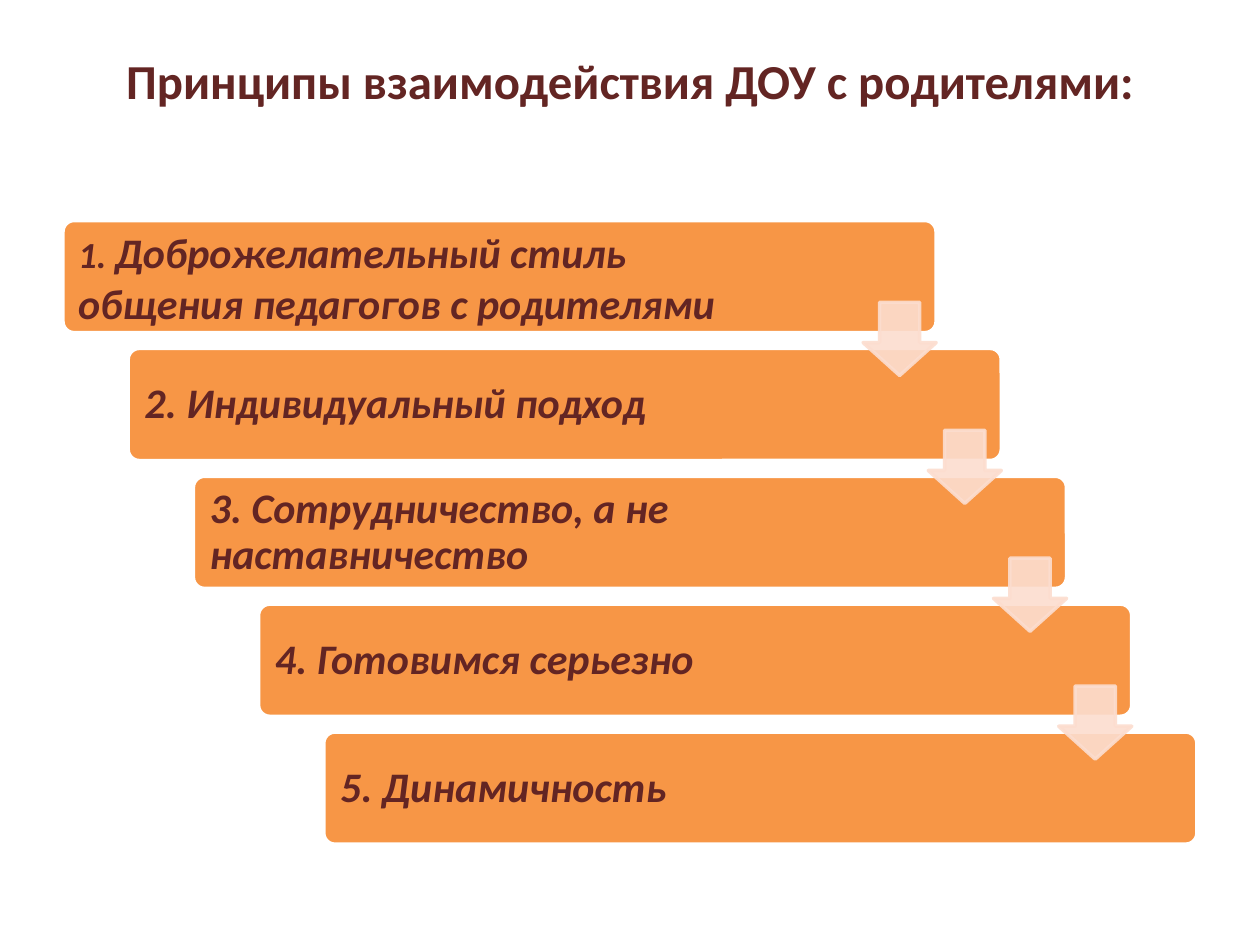
from lxml import etree
from pptx import Presentation
from pptx.dml.color import RGBColor
from pptx.enum.shapes import MSO_SHAPE
from pptx.enum.text import MSO_ANCHOR, PP_ALIGN
from pptx.oxml.ns import qn
from pptx.util import Inches, Pt

COLORS = {"text": "632523", "step": "F79646", "edge": "FFFFFF", "arrow": "FCDDCF"}
PRINCIPLES = [
    "Доброжелательный стиль общения педагогов с родителями",
    "Индивидуальный подход",
    "Сотрудничество, а не наставничество",
    "Готовимся серьезно",
    "Динамичность",
]
FIRST_LEFT, LAST_LEFT = 0.5, 2.57
FIRST_TOP, LAST_TOP = 1.75, 5.81
STEP_WIDTH, STEP_HEIGHT = 6.93, 0.89
ARROW_SIZE = 0.58


class SlideBuilder:
    font_name = "Calibri"

    def __init__(self, page):
        self.page = page

    def shape(self, preset, left, top, width, height, adjustments, fill, line, opacity=100):
        shape = self.page.shapes.add_shape(
            preset, Inches(left), Inches(top), Inches(width), Inches(height))
        shape.shadow.inherit = False
        for index, value in enumerate(adjustments):
            shape.adjustments[index] = value
        shape.fill.solid()
        shape.fill.fore_color.rgb = RGBColor.from_string(COLORS[fill])
        shape.line.color.rgb = RGBColor.from_string(COLORS[line])
        shape.line.width = Pt(2)
        if opacity < 100:
            for color in shape._element.spPr.iter(qn("a:srgbClr")):
                etree.SubElement(color, qn("a:alpha"), val=str(opacity * 1000))

    def text(self, left, top, width, height, spans, size, inset=0.1, italic=False,
             align=PP_ALIGN.LEFT, anchor=MSO_ANCHOR.MIDDLE, spacing=1.0):
        """Add one bold paragraph; spans are (text, own size or None)."""
        box = self.page.shapes.add_textbox(
            Inches(left), Inches(top), Inches(width), Inches(height))
        frame = box.text_frame
        frame.word_wrap = True
        frame.vertical_anchor = anchor
        frame.margin_left = frame.margin_right = Inches(inset)
        frame.margin_top = frame.margin_bottom = Inches(inset)
        para = frame.paragraphs[0]
        para.alignment = align
        para.line_spacing = spacing
        font = para.font
        font.name, font.size, font.bold, font.italic = self.font_name, Pt(size), True, italic
        font.color.rgb = RGBColor.from_string(COLORS["text"])
        for words, own_size in spans:
            span = para.add_run()
            span.text = words
            if own_size:
                span.font.size = Pt(own_size)


def main():
    deck = Presentation()
    deck.slide_width, deck.slide_height = Inches(10), Inches(7.5)
    builder = SlideBuilder(deck.slides.add_slide(deck.slide_layouts[6]))

    builder.text(0.5, 0.3, 9, 1.25, [("Принципы взаимодействия ДОУ с родителями:", None)],
                 27.9, align=PP_ALIGN.CENTER, anchor=MSO_ANCHOR.TOP)

    gaps = len(PRINCIPLES) - 1
    places = [(FIRST_LEFT + (LAST_LEFT - FIRST_LEFT) * index / gaps,
               FIRST_TOP + (LAST_TOP - FIRST_TOP) * index / gaps)
              for index in range(len(PRINCIPLES))]

    for index, (principle, (left, top)) in enumerate(zip(PRINCIPLES, places)):
        first = index == 0
        builder.shape(MSO_SHAPE.ROUNDED_RECTANGLE, left, top, STEP_WIDTH, STEP_HEIGHT,
                      [0.1], "step", "edge")
        builder.text(left + 0.03, top + 0.03, 5.86 if first else 5.78, 0.84,
                     [(f"{index + 1}. ", 21 if first else None), (principle, None)], 24,
                     inset=0.09 if first else 0.1, italic=True, spacing=1.0 if first else 0.9)

    for left, top in places[:-1]:
        builder.shape(MSO_SHAPE.DOWN_ARROW, left + 6.35, top + 0.65, ARROW_SIZE, ARROW_SIZE,
                      [0.55, 0.45], "arrow", "arrow", opacity=90)

    deck.save("out.pptx")


if __name__ == "__main__":
    main()
